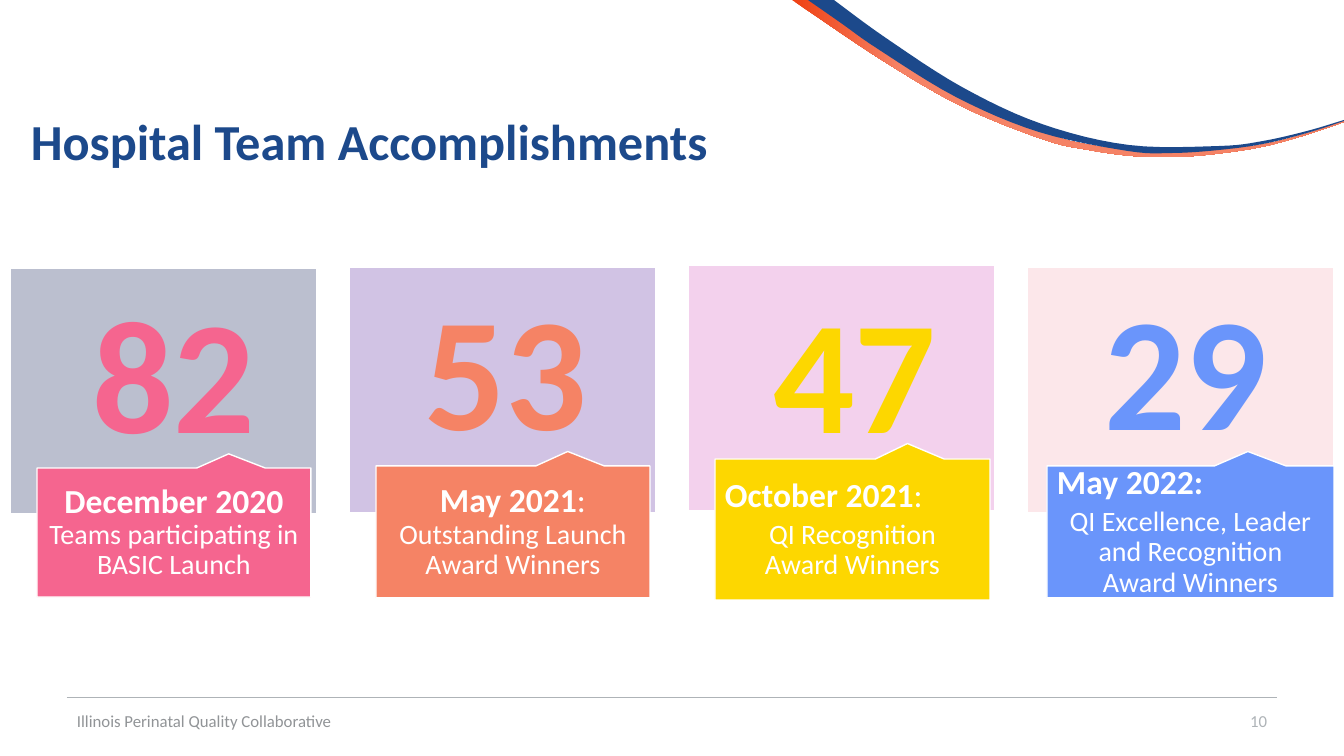
import pptx
import pptx.util
import pptx.dml.color
import pptx.enum.shapes
import pptx.enum.text
import pptx.oxml.ns
import lxml.etree

SLIDE_SIZE = (1344, 756)
EMU_PER_PX = 914400 / 100.8
FONT = "Calibri"
NAVY, WHITE, RULE_GREY, FOOTER_GREY = "1C498B", "FFFFFF", "AEB3B7", "919497"
LEFT, CENTER, RIGHT = (pptx.enum.text.PP_ALIGN.LEFT, pptx.enum.text.PP_ALIGN.CENTER,
                       pptx.enum.text.PP_ALIGN.RIGHT)
MIDDLE, TOP = pptx.enum.text.MSO_ANCHOR.MIDDLE, pptx.enum.text.MSO_ANCHOR.TOP
SHAPES = pptx.enum.shapes.MSO_SHAPE

# Content
title = "Hospital Team Accomplishments"
footer = "Illinois Perinatal Quality Collaborative"
page_number = "10"

# date runs are (text, bold); boxes are in px; gap is in points
cards = [
    dict(count="82", date=[("December 2020", True)], date_align=CENTER, gap=0,
         award=["Teams participating in", "BASIC Launch"],
         accent="F5658F", panel="BBBFCF", panel_top=268,
         callout=(37, 468, 274, 129), count_at=(55, 268)),
    dict(count="53", date=[("May 2021", True), (":", False)], date_align=CENTER, gap=0,
         award=["Outstanding Launch", "Award Winners"],
         accent="F58365", panel="D1C3E4", panel_top=267,
         callout=(376, 466, 274, 132), count_at=(387, 265)),
    dict(count="47", date=[("October 2021", True), (":", False)], date_align=LEFT, gap=4,
         award=["QI Recognition", "Award Winners"],
         accent="FDD700", panel="F3D1ED", panel_top=265,
         callout=(715, 459, 275, 141), count_at=(736, 268)),
    dict(count="29", date=[("May 2022:", True)], date_align=LEFT, gap=4,
         award=["QI Excellence, Leader", "and Recognition", "Award Winners"],
         accent="6A95FB", panel="FCE7EA", panel_top=267,
         callout=(1047, 466, 287, 132), count_at=(1067, 265)),
]
PANEL_LEFT, PANEL_PITCH, PANEL_SIZE = 10, 339, (307, 246)
COUNT_SIZE = (238, 206)

# Upper and lower edge of each swoosh band
orange_band = (
    [(811, 0), (889, 54), (966, 100), (1047, 134), (1090, 145), (1134, 151),
     (1177, 153), (1222, 150), (1266, 144), (1309, 133), (1344, 121)],
    [(792, 0), (810, 12), (885, 62), (963, 107), (1045, 140), (1089, 150), (1133, 156),
     (1178, 157), (1223, 153), (1266, 146), (1309, 134), (1344, 122)])
navy_band = (
    [(834, 0), (886, 38), (962, 87), (1042, 124), (1129, 145), (1219, 146),
     (1263, 141), (1307, 131), (1344, 120)],
    [(808, 0), (841, 23), (878, 49), (956, 97), (1039, 132), (1128, 151), (1173, 153),
     (1219, 150), (1263, 144), (1307, 133), (1344, 121)])


def px(*lengths):
    return [round(length * EMU_PER_PX) for length in lengths]


def color(value):
    return pptx.dml.color.RGBColor.from_string(value)


def paint(shape, fill, line=None):
    shape.shadow.inherit = False
    shape.fill.solid()
    shape.fill.fore_color.rgb = color(fill)
    if line:
        shape.line.color.rgb = color(line)
        shape.line.width = pptx.util.Pt(1)
    else:
        shape.line.fill.background()


def add_run(paragraph, text, size, ink, bold=False):
    run = paragraph.add_run()
    run.text = text
    run.font.name, run.font.size, run.font.bold = FONT, pptx.util.Pt(size), bold
    run.font.color.rgb = color(ink)


def add_label(box, text, size, ink, bold=False, align=LEFT, anchor=MIDDLE):
    frame = slide.shapes.add_textbox(*px(*box)).text_frame
    frame.word_wrap = True
    frame.vertical_anchor = anchor
    frame.paragraphs[0].alignment = align
    add_run(frame.paragraphs[0], text, size, ink, bold)


def smooth(knots, steps=6):
    """Points of a Catmull-Rom curve through the knots."""
    padded = [knots[0], *knots, knots[-1]]
    points = [knots[0]]
    for a, b, c, d in zip(padded, padded[1:], padded[2:], padded[3:]):
        for step in range(1, steps + 1):
            t = step / steps
            points.append(tuple(
                (2 * q + (r - p) * t + (2 * p - 5 * q + 4 * r - s) * t ** 2
                 + (3 * q - p - 3 * r + s) * t ** 3) / 2
                for p, q, r, s in zip(a, b, c, d)))
    return points


def add_band(edges, fill):
    upper, lower = map(smooth, edges)
    start, *rest = [px(*point) for point in upper + lower[::-1]]
    builder = slide.shapes.build_freeform(*start)
    builder.add_line_segments(rest, close=True)
    band = builder.convert_to_shape()
    paint(band, fill)
    return band


def add_card(index, card):
    panel = slide.shapes.add_shape(SHAPES.RECTANGLE, *px(
        PANEL_LEFT + index * PANEL_PITCH, card["panel_top"], *PANEL_SIZE))
    paint(panel, card["panel"], WHITE)

    callout = slide.shapes.add_shape(SHAPES.RECTANGULAR_CALLOUT, *px(*card["callout"]))
    callout.adjustments[0], callout.adjustments[1] = 0.2, -0.61
    paint(callout, card["accent"], WHITE)
    frame = callout.text_frame
    frame.word_wrap = True
    frame.vertical_anchor = MIDDLE
    frame.margin_left = frame.margin_right = frame.margin_top = frame.margin_bottom = px(10)[0]

    date, award = frame.paragraphs[0], frame.add_paragraph()
    date.alignment, award.alignment = card["date_align"], CENTER
    date.line_spacing = award.line_spacing = 0.9
    award.space_before = pptx.util.Pt(card["gap"])
    for text, bold in card["date"]:
        add_run(date, text, 24, WHITE, bold)
    for number, line in enumerate(card["award"]):
        if number:
            award.add_line_break()
        add_run(award, line, 20, WHITE)

    add_label((*card["count_at"], *COUNT_SIZE), card["count"], 115, card["accent"],
              True, CENTER, TOP)


presentation = pptx.Presentation()
presentation.slide_width, presentation.slide_height = px(*SLIDE_SIZE)
slide = presentation.slides.add_slide(presentation.slide_layouts[6])

# Swoosh
orange = add_band(orange_band, "F58366")
orange.fill.gradient()
orange.fill.gradient_angle = 0
for stop, (position, tint) in zip(orange.fill.gradient_stops,
                                  [(0, "EF4114"), (0.2, "F58366")]):
    stop.position = position
    stop.color.rgb = color(tint)
add_band(navy_band, NAVY)

# Footer rule
rule = slide.shapes.add_connector(pptx.enum.shapes.MSO_CONNECTOR.STRAIGHT,
                                  *px(67, 698, 1277, 698))
rule.line.color.rgb = color(RULE_GREY)
rule.line.width = pptx.util.Pt(0.75)
lxml.etree.SubElement(rule.line._get_or_add_ln().getparent(),
                      pptx.oxml.ns.qn("a:effectLst"))

# Title and footer
add_label((21, 67, 1210, 146), title, 36, NAVY, bold=True)
add_label((975, 701, 302, 40), page_number, 12, RULE_GREY, align=RIGHT)
add_label((67, 701, 454, 40), footer, 12, FOOTER_GREY)

# Cards
for index, card in enumerate(cards):
    add_card(index, card)

presentation.save("out.pptx")
